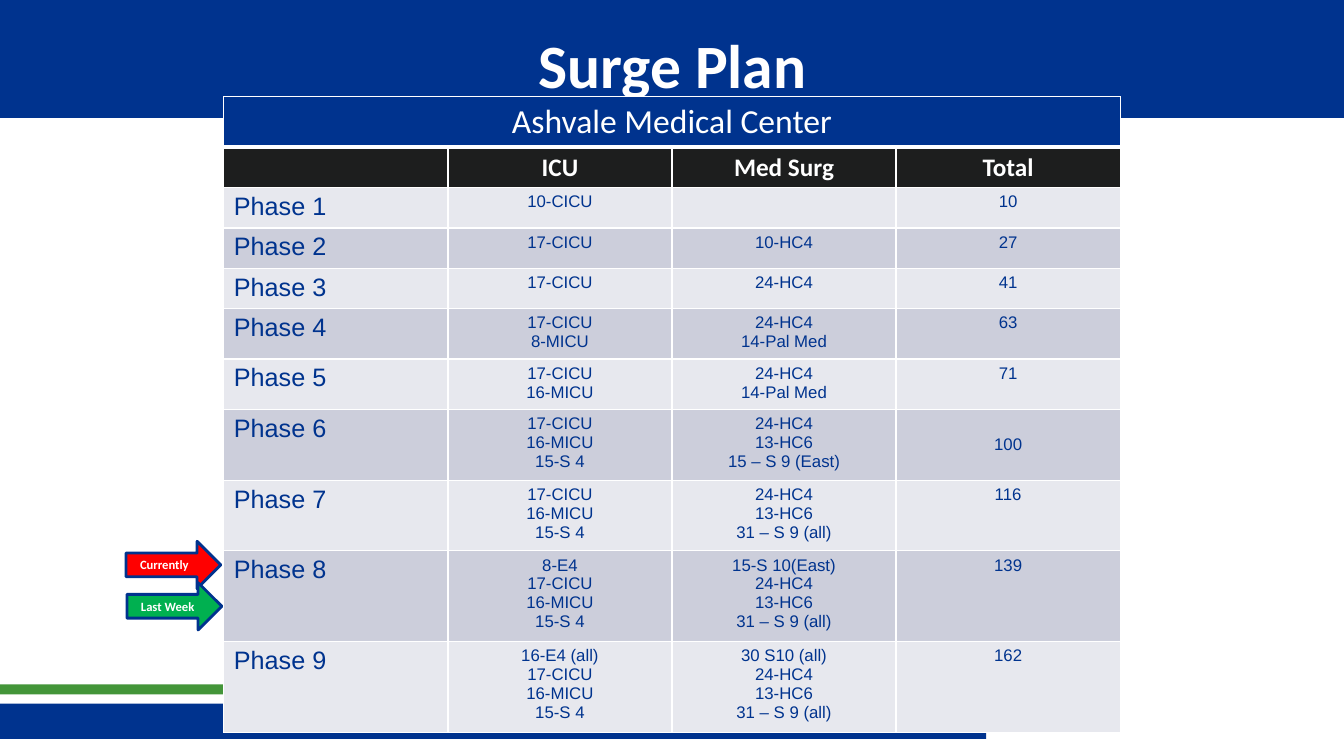
from dataclasses import dataclass

from lxml.etree import SubElement
from pptx import Presentation
from pptx.dml.color import RGBColor
from pptx.enum.shapes import MSO_SHAPE
from pptx.enum.text import MSO_ANCHOR, MSO_AUTO_SIZE, PP_ALIGN
from pptx.oxml.ns import qn
from pptx.slide import Slide
from pptx.table import _Cell
from pptx.text.text import TextFrame
from pptx.util import Inches, Pt

COLORS = {
    "navy": "00338E", "green": "439539", "white": "FFFFFF", "black": "1D1E1E",
    "light": "E7E8EE", "dark": "CCCEDB", "red": "FF0000", "emerald": "00B050",
}


@dataclass
class Bar:
    left: float
    top: float
    width: float
    height: float
    color: str


@dataclass
class Phase:
    icu: list[str]
    med_surg: list[str]
    total: str
    height: float
    total_anchor: MSO_ANCHOR = MSO_ANCHOR.TOP


@dataclass
class Marker:
    label: str
    left: float
    top: float
    label_width: float
    color: str


@dataclass
class Style:
    size: float
    font: str = "Calibri"
    color: str = "white"
    bold: bool = False
    align: PP_ALIGN = PP_ALIGN.CENTER


BARS = [
    Bar(-0.03, 6.98, 9.81, 0.35, "navy"),
    Bar(-0.03, 6.79, 9.81, 0.1, "green"),
    Bar(0, 0, 13.33, 1.17, "navy"),
]
HEADINGS = ["", "ICU", "Med Surg", "Total"]
PHASES = [
    Phase(["10-CICU"], [], "10", 0.4),
    Phase(["17-CICU"], ["10-HC4"], "27", 0.4),
    Phase(["17-CICU"], ["24-HC4"], "41", 0.4),
    Phase(["17-CICU", "8-MICU"], ["24-HC4", "14-Pal Med"], "63", 0.49),
    Phase(["17-CICU", "16-MICU"], ["24-HC4", "14-Pal Med"], "71", 0.49),
    Phase(["17-CICU", "16-MICU", "15-S 4"],
          ["24-HC4", "13-HC6", "15 – S 9 (East)"], "100", 0.69, MSO_ANCHOR.MIDDLE),
    Phase(["17-CICU", "16-MICU", "15-S 4"],
          ["24-HC4", "13-HC6", "31 – S 9 (all)"], "116", 0.69),
    Phase(["8-E4", "17-CICU", "16-MICU", "15-S 4"],
          ["15-S 10(East)", "24-HC4", "13-HC6", "31 – S 9 (all)"], "139", 0.89),
    Phase(["16-E4 (all)", "17-CICU", "16-MICU", "15-S 4"],
          ["30 S10 (all)", "24-HC4", "13-HC6", "31 – S 9 (all)"], "162", 0.89),
]
MARKERS = [
    Marker("Currently", 1.25, 5.37, 0.69, "red"),
    Marker("Last Week", 1.26, 5.78, 0.74, "emerald"),
]

TITLE = Style(44, bold=True)
CENTER_NAME = Style(24)
HEADING = Style(18, bold=True)
PHASE_NAME = Style(18, "Arial", "navy", align=PP_ALIGN.LEFT)
BEDS = Style(12, "Arial", "navy")
MARKER_LABEL = Style(9, bold=True, align=PP_ALIGN.LEFT)


def rgb(name: str) -> RGBColor:
    return RGBColor.from_string(COLORS[name])


def write_lines(frame: TextFrame, lines: list[str], style: Style) -> None:
    for index, line in enumerate(lines):
        paragraph = frame.add_paragraph() if index else frame.paragraphs[0]
        paragraph.alignment = style.align
        run = paragraph.add_run()
        run.text = line
        run.font.size = Pt(style.size)
        run.font.name = style.font
        run.font.bold = style.bold
        run.font.color.rgb = rgb(style.color)


def add_bar(slide: Slide, bar: Bar) -> None:
    shape = slide.shapes.add_shape(
        MSO_SHAPE.RECTANGLE, Inches(bar.left), Inches(bar.top),
        Inches(bar.width), Inches(bar.height))
    shape.shadow.inherit = False
    shape.fill.solid()
    shape.fill.fore_color.rgb = rgb(bar.color)
    shape.line.fill.background()


def add_title(slide: Slide) -> None:
    box = slide.shapes.add_textbox(Inches(0.67), Inches(0.17), Inches(12), Inches(0.92))
    box.text_frame.word_wrap = True
    box.text_frame.vertical_anchor = MSO_ANCHOR.MIDDLE
    write_lines(box.text_frame, ["Surge Plan"], TITLE)


def fill_cell(cell: _Cell, lines: list[str], style: Style, fill: str,
              bottom_width: float = 1) -> None:
    properties = cell._tc.get_or_add_tcPr()
    for side in "LRTB":
        width = bottom_width if side == "B" else 1
        border = SubElement(properties, qn(f"a:ln{side}"), w=str(Pt(width)))
        solid = SubElement(border, qn("a:solidFill"))
        SubElement(solid, qn("a:srgbClr"), val=COLORS["white"])
    cell.fill.solid()
    cell.fill.fore_color.rgb = rgb(fill)
    write_lines(cell.text_frame, lines, style)


def add_surge_table(slide: Slide) -> None:
    heights = [0.49, 0.4] + [phase.height for phase in PHASES]
    table = slide.shapes.add_table(
        len(heights), len(HEADINGS), Inches(2.22), Inches(0.96),
        Inches(8.89), Inches(sum(heights))).table
    table.first_row = False
    table.horz_banding = False
    for row, height in zip(table.rows, heights):
        row.height = Inches(height)

    # Name and column headings
    table.cell(0, 0).merge(table.cell(0, len(HEADINGS) - 1))
    for column, heading in enumerate(HEADINGS):
        name = [] if column else ["Ashvale Medical Center"]
        fill_cell(table.cell(0, column), name, CENTER_NAME, "navy", 3)
        fill_cell(table.cell(1, column), [heading] if heading else [], HEADING, "black")

    # Phases
    for number, phase in enumerate(PHASES, start=1):
        row = number + 1
        fill = "light" if number % 2 else "dark"
        fill_cell(table.cell(row, 0), [f"Phase {number}"], PHASE_NAME, fill)
        for column, lines in enumerate([phase.icu, phase.med_surg, [phase.total]], start=1):
            fill_cell(table.cell(row, column), lines, BEDS, fill)
        table.cell(row, 3).vertical_anchor = phase.total_anchor


def add_marker(slide: Slide, marker: Marker) -> None:
    group = slide.shapes.add_group_shape()
    arrow = group.shapes.add_shape(
        MSO_SHAPE.RIGHT_ARROW, Inches(marker.left), Inches(marker.top),
        Inches(0.94), Inches(0.47))
    arrow.shadow.inherit = False
    arrow.fill.solid()
    arrow.fill.fore_color.rgb = rgb(marker.color)
    arrow.line.color.rgb = rgb("navy")
    arrow.line.width = Pt(2)
    label = group.shapes.add_textbox(
        Inches(marker.left + 0.04), Inches(marker.top + 0.11),
        Inches(marker.label_width), Inches(0.25))
    label.text_frame.word_wrap = False
    label.text_frame.auto_size = MSO_AUTO_SIZE.SHAPE_TO_FIT_TEXT
    write_lines(label.text_frame, [marker.label], MARKER_LABEL)


def main() -> None:
    presentation = Presentation()
    presentation.slide_width = Inches(13.33)
    presentation.slide_height = Inches(7.5)
    slide = presentation.slides.add_slide(presentation.slide_layouts[6])
    for bar in BARS:
        add_bar(slide, bar)
    add_title(slide)
    add_surge_table(slide)
    for marker in MARKERS:
        add_marker(slide, marker)
    presentation.save("out.pptx")


if __name__ == "__main__":
    main()
